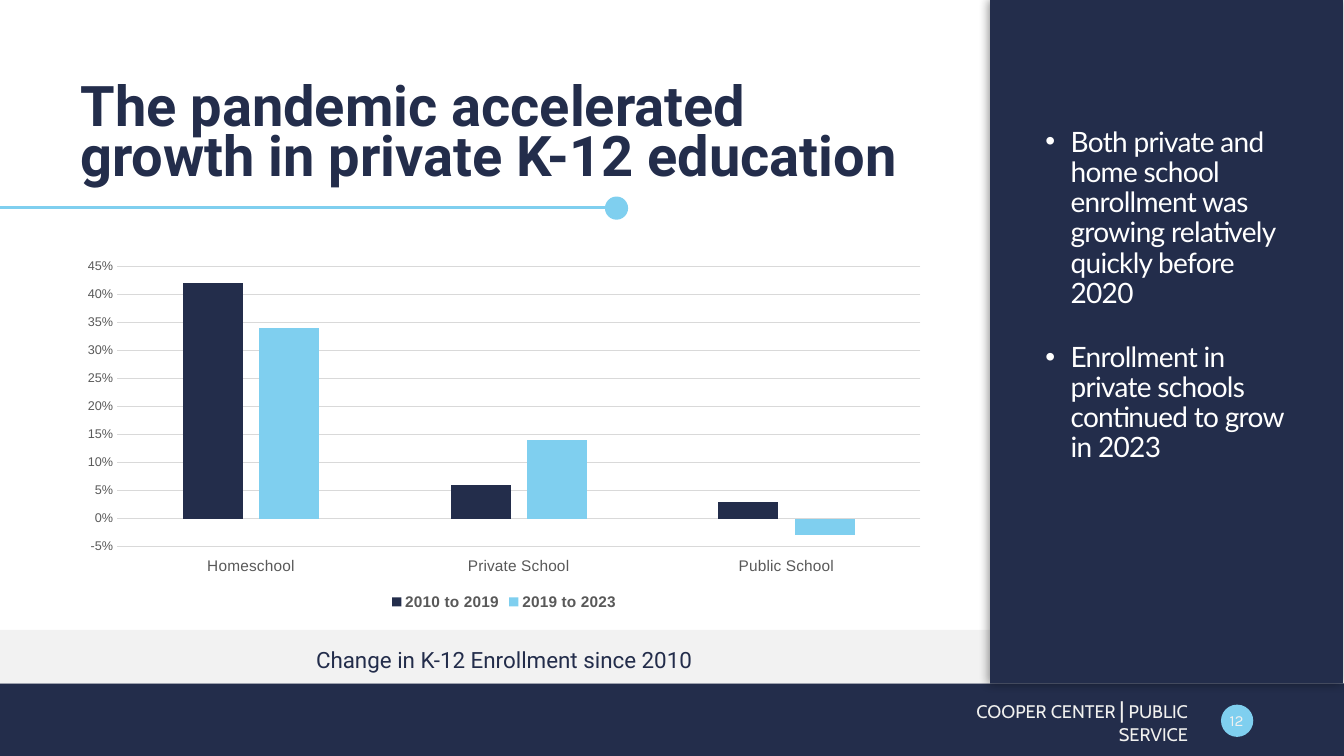
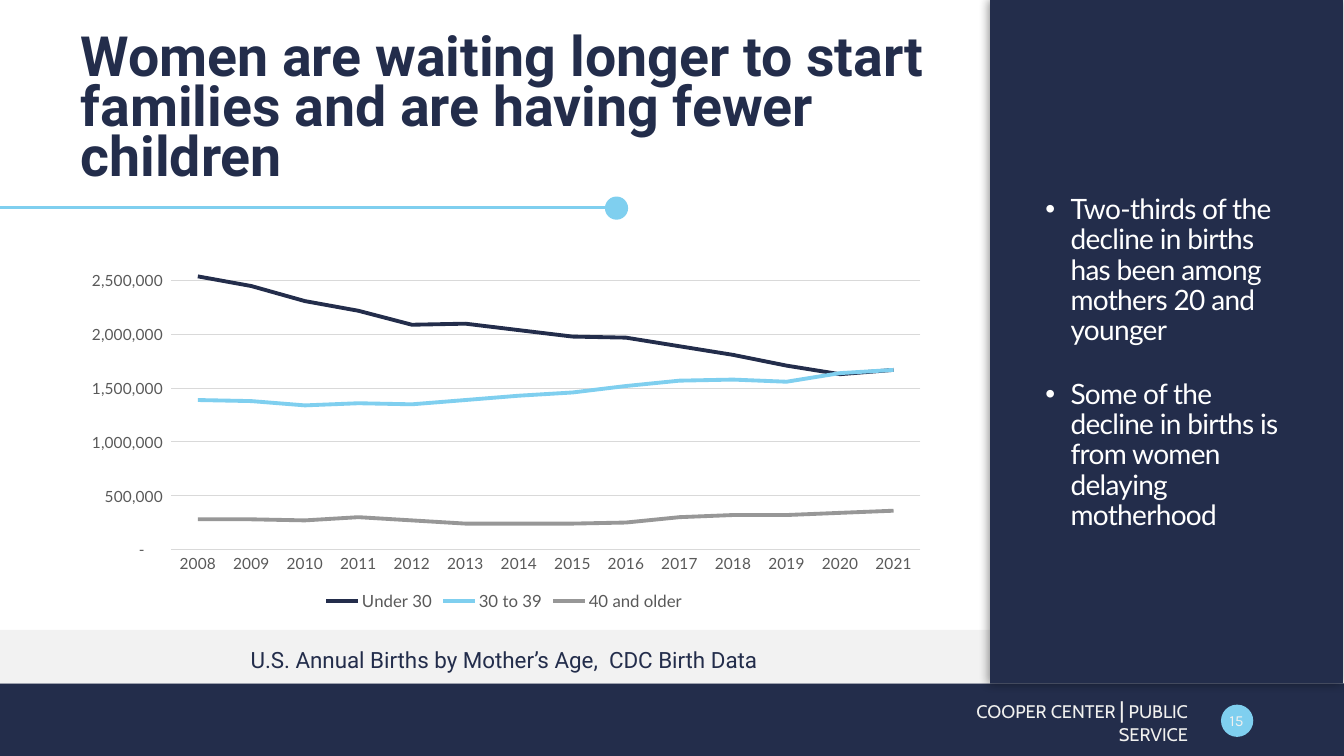
from dataclasses import dataclass

from lxml import etree
from pptx import Presentation
from pptx.chart.data import CategoryChartData
from pptx.dml.color import RGBColor
from pptx.enum.chart import XL_CHART_TYPE, XL_LEGEND_POSITION, XL_TICK_LABEL_POSITION, XL_TICK_MARK
from pptx.enum.shapes import MSO_CONNECTOR, MSO_SHAPE
from pptx.enum.text import MSO_ANCHOR, PP_ALIGN
from pptx.oxml.ns import qn
from pptx.util import Emu, Pt

# Enum members
RECTANGLE, OVAL = MSO_SHAPE.RECTANGLE, MSO_SHAPE.OVAL
STRAIGHT = MSO_CONNECTOR.STRAIGHT
LEFT, CENTER, RIGHT = PP_ALIGN.LEFT, PP_ALIGN.CENTER, PP_ALIGN.RIGHT
TOP, MIDDLE, BOTTOM = MSO_ANCHOR.TOP, MSO_ANCHOR.MIDDLE, MSO_ANCHOR.BOTTOM
COLUMNS, LINES = XL_CHART_TYPE.COLUMN_CLUSTERED, XL_CHART_TYPE.LINE
LEGEND_BOTTOM = XL_LEGEND_POSITION.BOTTOM
LABELS_LOW = XL_TICK_LABEL_POSITION.LOW
NO_TICK = XL_TICK_MARK.NONE

# Scale: 100 px to the inch
EMU_PER_PX = 9144
SLIDE_WIDTH, SLIDE_HEIGHT = 1333, 750
FOOTER_TOP = 678
PANEL_LEFT = 982
CONTENT_LEFT, CONTENT_WIDTH = 70, 860

# Colours and fonts
NAVY, SKY, GRAY = "232D4B", "7FCFEF", "979797"
WHITE, PALE, OFF_WHITE = "FFFFFF", "F2F2F2", "F1F1EF"
AXIS_TEXT, GRID = "595959", "D9D9D9"
HEADING_FONT, BODY_FONT = "Roboto", "Lato"

Box = tuple[int, int, int, int]


@dataclass(frozen=True)
class TextRun:
    text: str
    size: float


@dataclass(frozen=True)
class Series:
    name: str
    values: tuple[float, ...]
    color: str


@dataclass(frozen=True)
class ChartSpec:
    kind: int
    categories: tuple[str, ...]
    series: tuple[Series, ...]
    number_format: str
    minimum: float
    maximum: float
    step: float
    font: str
    value_size: int
    legend_size: int
    legend_bold: bool


@dataclass(frozen=True)
class SlideSpec:
    title: str
    title_size: float
    points: tuple[str, ...]
    points_box: Box
    caption: str
    number: str
    chart: ChartSpec


def px(value: int) -> Emu:
    return Emu(value * EMU_PER_PX)


def rgb(color: str) -> RGBColor:
    return RGBColor.from_string(color)


def style_font(font, name: str, size: float, color: str, bold: bool = False) -> None:
    font.name = name
    font.size = Pt(size)
    font.bold = bold
    font.color.rgb = rgb(color)


def add_block(slide, preset, box: Box, color: str):
    shape = slide.shapes.add_shape(preset, *map(px, box))
    shape.shadow.inherit = False
    shape.fill.solid()
    shape.fill.fore_color.rgb = rgb(color)
    shape.line.fill.background()
    return shape


def add_bullet(paragraph) -> None:
    properties = paragraph._p.get_or_add_pPr()
    properties.set("marL", "228600")
    properties.set("indent", "-228600")
    etree.SubElement(properties, qn("a:buFont"), typeface="Arial")
    etree.SubElement(properties, qn("a:buChar"), char="•")


def add_text(slide, box: Box, paragraphs: list[list[TextRun]], *, font: str, color: str,
             bold: bool = False, align=LEFT, anchor=TOP, line_spacing: float = 1.0,
             space_after: int = 0, bullet: bool = False, tracking: int = 0) -> None:
    frame = slide.shapes.add_textbox(*map(px, box)).text_frame
    frame.word_wrap = True
    frame.vertical_anchor = anchor
    for index, runs in enumerate(paragraphs):
        paragraph = frame.add_paragraph() if index else frame.paragraphs[0]
        paragraph.alignment = align
        paragraph.line_spacing = line_spacing
        paragraph.space_after = Pt(space_after)
        if bullet:
            add_bullet(paragraph)
        for text_run in runs:
            run = paragraph.add_run()
            run.text = text_run.text
            style_font(run.font, font, text_run.size, color, bold)
            if tracking:
                run._r.get_or_add_rPr().set("spc", str(tracking))


def add_left_shadow(shape) -> None:
    effects = shape._element.spPr.find(qn("a:effectLst"))
    shadow = etree.SubElement(effects, qn("a:outerShdw"), blurRad="88900", dist="12700",
                              dir="10800000", algn="r", rotWithShape="0")
    shadow_color = etree.SubElement(shadow, qn("a:srgbClr"), val="000000")
    etree.SubElement(shadow_color, qn("a:alpha"), val="40000")


def add_frame(slide, number: str) -> None:
    # Footer, caption band and side panel
    add_block(slide, RECTANGLE, (0, FOOTER_TOP, SLIDE_WIDTH, SLIDE_HEIGHT - FOOTER_TOP), NAVY)
    add_block(slide, OVAL, (1211, 699, 32, 32), SKY)
    add_block(slide, RECTANGLE, (0, 625, PANEL_LEFT, FOOTER_TOP - 625), PALE)
    add_left_shadow(add_block(slide, RECTANGLE, (PANEL_LEFT, 0, 350, FOOTER_TOP), NAVY))

    # Rule below the title
    add_block(slide, OVAL, (600, 195, 23, 23), SKY)
    rule = slide.shapes.add_connector(STRAIGHT, px(0), px(206), px(600), px(206))
    rule.line.color.rgb = rgb(SKY)
    rule.line.width = Pt(2.25)
    etree.SubElement(rule._element.spPr, qn("a:effectLst"))

    # Footer text
    department = [TextRun("COOPER CENTER ", 13), TextRun("|", 16), TextRun(" PUBLIC SERVICE", 13)]
    add_text(slide, (920, 695, 268, 40), [department], font="Cabin", color=OFF_WHITE,
             align=RIGHT, anchor=MIDDLE)
    add_text(slide, (1204, 697, 45, 35), [[TextRun(number, 11)]], font="Karla",
             color=OFF_WHITE, align=CENTER, anchor=MIDDLE)


def style_axes(chart, spec: ChartSpec) -> None:
    category_axis, value_axis = chart.category_axis, chart.value_axis
    for axis, size in ((category_axis, 11), (value_axis, spec.value_size)):
        axis.major_tick_mark = axis.minor_tick_mark = NO_TICK
        style_font(axis.tick_labels.font, spec.font, size, AXIS_TEXT)
    category_axis.has_major_gridlines = False
    value_axis.has_major_gridlines = True
    for line in (category_axis.format.line, value_axis.major_gridlines.format.line):
        line.color.rgb = rgb(GRID)
        line.width = Pt(0.75)
    value_axis.format.line.fill.background()
    value_axis.minimum_scale = spec.minimum
    value_axis.maximum_scale = spec.maximum
    value_axis.major_unit = spec.step
    value_axis.tick_labels.number_format = spec.number_format
    value_axis.tick_labels.number_format_is_linked = False


def add_data_chart(slide, spec: ChartSpec) -> None:
    data = CategoryChartData(number_format=spec.number_format)
    data.categories = spec.categories
    for series in spec.series:
        data.add_series(series.name, series.values)
    box = (CONTENT_LEFT, 250, CONTENT_WIDTH, 360)
    chart = slide.shapes.add_chart(spec.kind, *map(px, box), data).chart
    chart.has_title = False
    style_font(chart.font, "Calibri", 10, "000000")
    chart.has_legend = True
    chart.legend.position = LEGEND_BOTTOM
    chart.legend.include_in_layout = False
    style_font(chart.legend.font, spec.font, spec.legend_size, AXIS_TEXT, spec.legend_bold)
    style_axes(chart, spec)

    plot = chart.plots[0]
    plot.vary_by_categories = False
    if spec.kind == COLUMNS:
        plot.gap_width = 219
        plot.overlap = -27
        chart.category_axis.tick_label_position = LABELS_LOW
    for drawn, series in zip(plot.series, spec.series):
        if spec.kind == COLUMNS:
            drawn.invert_if_negative = False
            drawn.format.fill.solid()
            drawn.format.fill.fore_color.rgb = rgb(series.color)
        else:
            drawn.smooth = False
            drawn.format.line.color.rgb = rgb(series.color)
            drawn.format.line.width = Pt(2.75)


def add_slide(presentation, spec: SlideSpec) -> None:
    slide = presentation.slides.add_slide(presentation.slide_layouts[6])
    add_frame(slide, spec.number)
    add_text(slide, (CONTENT_LEFT, 60, CONTENT_WIDTH, 130),
             [[TextRun(spec.title, spec.title_size)]], font=HEADING_FONT, color=NAVY,
             bold=True, anchor=BOTTOM, line_spacing=0.75)
    add_text(slide, spec.points_box, [[TextRun(point, 20)] for point in spec.points],
             font=BODY_FONT, color=WHITE, line_spacing=0.9, space_after=24, bullet=True,
             tracking=-50)
    add_text(slide, (CONTENT_LEFT, 639, CONTENT_WIDTH, 26), [[TextRun(spec.caption, 16)]],
             font=HEADING_FONT, color=NAVY, align=CENTER, line_spacing=0.9)
    add_data_chart(slide, spec.chart)


# Content
ENROLLMENT_CHART = ChartSpec(
    kind=COLUMNS,
    categories=("Homeschool", "Private School", "Public School"),
    series=(
        Series("2010 to 2019", (0.42, 0.06, 0.03), NAVY),
        Series("2019 to 2023", (0.34, 0.14, -0.03), SKY),
    ),
    number_format="0%", minimum=-0.05, maximum=0.45, step=0.05,
    font="Arial", value_size=9, legend_size=11, legend_bold=True,
)

BIRTHS_CHART = ChartSpec(
    kind=LINES,
    categories=tuple(str(year) for year in range(2008, 2022)),
    series=(
        Series("Under 30", (2540000, 2450000, 2310000, 2220000, 2090000, 2100000, 2040000,
                            1980000, 1970000, 1890000, 1810000, 1710000, 1630000, 1670000), NAVY),
        Series("30 to 39", (1390000, 1380000, 1340000, 1360000, 1350000, 1390000, 1430000,
                            1460000, 1520000, 1570000, 1580000, 1560000, 1640000, 1670000), SKY),
        Series("40 and older", (280000, 280000, 270000, 300000, 270000, 240000, 240000,
                                240000, 250000, 300000, 320000, 320000, 340000, 360000), GRAY),
    ),
    number_format=r'_(* #,##0_);_(* \(#,##0\);_(* "-"??_);_(@_)',
    minimum=0, maximum=2700000, step=500000,
    font=BODY_FONT, value_size=11, legend_size=12, legend_bold=False,
)

SLIDES = (
    SlideSpec(
        title="The pandemic accelerated growth in private K-12 education",
        title_size=40,
        points=(
            "Both private and home school enrollment was growing relatively quickly before 2020",
            "Enrollment in private schools continued to grow in 2023",
        ),
        points_box=(1027, 122, 264, 503),
        caption="Change in K-12 Enrollment since 2010",
        number="12",
        chart=ENROLLMENT_CHART,
    ),
    SlideSpec(
        title="Women are waiting longer to start families and are having fewer children",
        title_size=39.6,
        points=(
            "Two-thirds of the decline in births has been among mothers 20 and younger",
            "Some of the decline in births is from women delaying motherhood",
        ),
        points_box=(1027, 189, 260, 436),
        caption="U.S. Annual Births by Mother’s Age,  CDC Birth Data",
        number="15",
        chart=BIRTHS_CHART,
    ),
)


def main() -> None:
    presentation = Presentation()
    presentation.slide_width = px(SLIDE_WIDTH)
    presentation.slide_height = px(SLIDE_HEIGHT)
    for spec in SLIDES:
        add_slide(presentation, spec)
    presentation.save("out.pptx")


if __name__ == "__main__":
    main()
